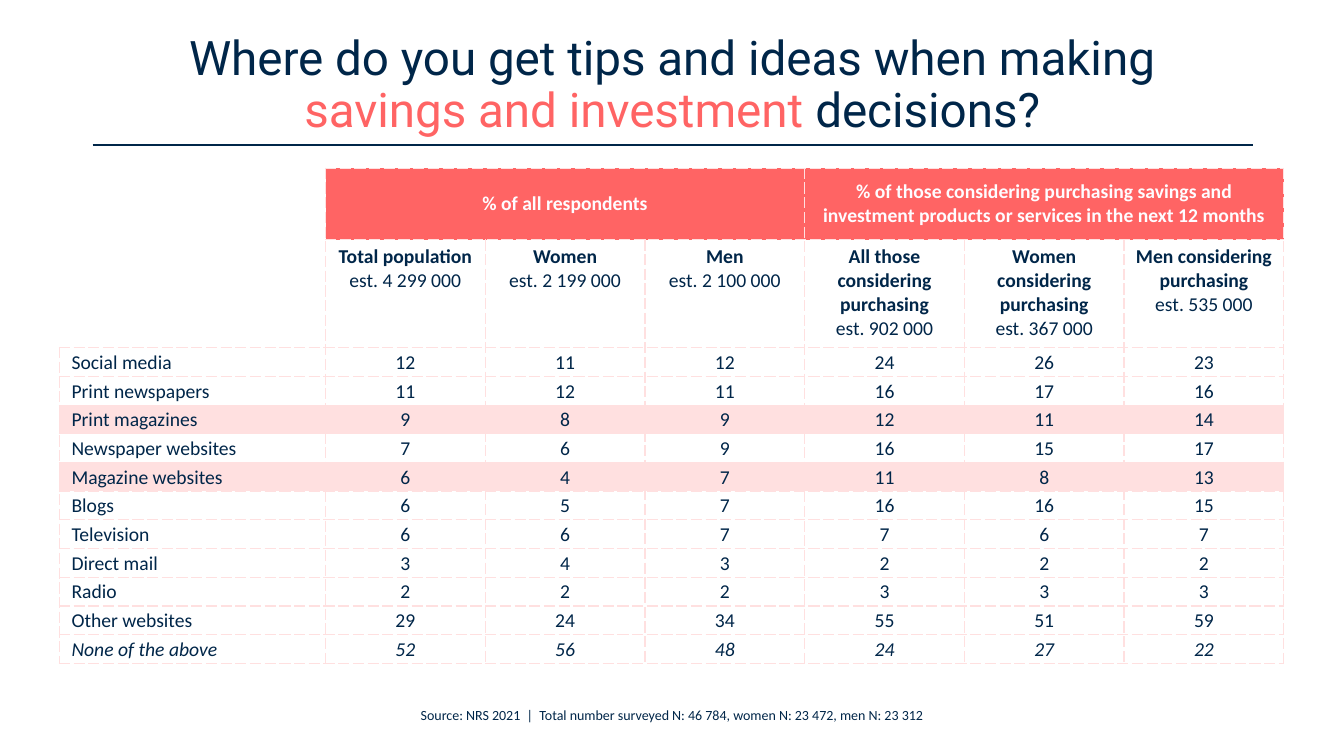
from dataclasses import dataclass

from lxml import etree
from pptx import Presentation, util as u
from pptx.dml.color import RGBColor
from pptx.enum import shapes, text
from pptx.oxml import ns

PX = 4572  # EMU; 200 px to the inch
CENTER, LEFT = text.PP_ALIGN.CENTER, text.PP_ALIGN.LEFT
MIDDLE, TOP = text.MSO_ANCHOR.MIDDLE, text.MSO_ANCHOR.TOP
BREAK = "\n"


@dataclass(frozen=True)
class Theme:
    navy: str = "002649"
    coral: str = "FF6464"
    blush: str = "FFE0E0"
    white: str = "FFFFFF"
    header_text: str = "FEFCFF"
    heading_font: str = "Roboto"
    body_font: str = "Calibri"
    title_size: int = 34
    table_size: int = 14
    source_size: int = 10


def px(length):
    return u.Emu(length * PX)


def set_attributes(target, values):
    for name, value in values.items():
        setattr(target, name, value)


class SlideBuilder:
    def __init__(self, presentation, theme):
        self.theme = theme
        self.slide = presentation.slides.add_slide(presentation.slide_layouts[5])

    def add_runs(self, paragraph, runs, size, align=CENTER, font=None, color=None):
        """Add (text, format) runs; a format may override the colour or any font value."""
        paragraph.alignment = align
        for content, changes in runs:
            if content == BREAK:
                paragraph.add_line_break()
                continue
            values = {"name": font or self.theme.body_font, "size": u.Pt(size),
                      "bold": False, "italic": False, **changes}
            run_color = values.pop("color", color or self.theme.navy)
            run = paragraph.add_run()
            run.text = content
            set_attributes(run.font, values)
            run.font.color.rgb = RGBColor.from_string(run_color)

    def title(self, box, runs):
        shape = self.slide.shapes.title
        set_attributes(shape, dict(zip(("left", "top", "width", "height"), map(px, box))))
        set_attributes(shape.text_frame, {
            "word_wrap": True, "vertical_anchor": MIDDLE, "auto_size": text.MSO_AUTO_SIZE.NONE})
        paragraph = shape.text_frame.paragraphs[0]
        paragraph.line_spacing = 0.9
        self.add_runs(paragraph, runs, self.theme.title_size, font=self.theme.heading_font)

    def rule(self, left, right, y):
        connector = self.slide.shapes.add_connector(
            shapes.MSO_CONNECTOR.STRAIGHT, px(left), px(y), px(right), px(y))
        connector.line.width = u.Pt(1)
        connector.line.color.rgb = RGBColor.from_string(self.theme.navy)
        etree.SubElement(connector._element.spPr, ns.qn("a:effectLst"))

    def source(self, box, content):
        frame = self.slide.shapes.add_textbox(*map(px, box)).text_frame
        set_attributes(frame, {
            "word_wrap": False, "auto_size": text.MSO_AUTO_SIZE.SHAPE_TO_FIT_TEXT})
        self.add_runs(frame.paragraphs[0], [(content, {})], self.theme.source_size)

    def table(self, left, top, widths, heights):
        """Add an unfilled table with dashed borders on every cell."""
        table = self.slide.shapes.add_table(
            len(heights), len(widths), px(left), px(top),
            px(sum(widths)), px(sum(heights))).table
        set_attributes(table, {"first_row": False, "horz_banding": False})
        for column, width in zip(table.columns, widths):
            column.width = px(width)
        for row, height in zip(table.rows, heights):
            row.height = px(height)
        for r in range(len(heights)):
            for c in range(len(widths)):
                is_corner = c == 0 and r < 2
                self.borders(table.cell(r, c), "RB" if is_corner else "LRTB")
                table.cell(r, c).fill.background()
        return table

    def borders(self, cell, sides):
        properties = cell._tc.get_or_add_tcPr()
        for side in "LRTB":
            line = etree.SubElement(properties, ns.qn(f"a:ln{side}"), w=str(u.Pt(1)))
            if side not in sides:
                etree.SubElement(line, ns.qn("a:noFill"))
                continue
            fill = etree.SubElement(line, ns.qn("a:solidFill"))
            etree.SubElement(fill, ns.qn("a:srgbClr"), val=self.theme.blush)
            etree.SubElement(line, ns.qn("a:prstDash"), val="sysDash")

    def cell(self, cell, runs, fill=None, anchor=MIDDLE, insets=None, **style):
        if fill:
            cell.fill.solid()
            cell.fill.fore_color.rgb = RGBColor.from_string(fill)
        cell.vertical_anchor = anchor
        if insets:
            sides = ("margin_left", "margin_top", "margin_right", "margin_bottom")
            set_attributes(cell, dict(zip(sides, map(px, insets))))
        self.add_runs(cell.text_frame.paragraphs[0], runs, self.theme.table_size, **style)


GROUPS = ["% of all respondents",
          "% of those considering purchasing savings and investment products "
          "or services in the next 12 months"]
AUDIENCES = [
    ("Total population", "est. 4 299 000"),
    ("Women", "est. 2 199 000"),
    ("Men", "est. 2 100 000"),
    ("All those considering purchasing", "est. 902 000"),
    ("Women considering purchasing", "est. 367 000"),
    ("Men considering purchasing", "est. 535 000"),
]
SHARES = {
    "Social media": (12, 11, 12, 24, 26, 23),
    "Print newspapers": (11, 12, 11, 16, 17, 16),
    "Print magazines": (9, 8, 9, 12, 11, 14),
    "Newspaper websites": (7, 6, 9, 16, 15, 17),
    "Magazine websites": (6, 4, 7, 11, 8, 13),
    "Blogs": (6, 5, 7, 16, 16, 15),
    "Television": (6, 6, 7, 7, 6, 7),
    "Direct mail": (3, 4, 3, 2, 2, 2),
    "Radio": (2, 2, 2, 3, 3, 3),
    "Other websites": (29, 24, 34, 55, 51, 59),
    "None of the above": (52, 56, 48, 24, 27, 22),
}
HIGHLIGHTED = {"Print magazines", "Magazine websites"}
ITALIC = {"None of the above"}


def add_tips_table(builder):
    theme = builder.theme
    table = builder.table(118, 334, [528] + [317] * len(AUDIENCES),
                          [142, 214] + [57] * len(SHARES))

    corner = table.cell(0, 0)
    corner.merge(table.cell(1, 0))
    builder.cell(corner, [], fill=theme.white)
    for index, group in enumerate(GROUPS):
        first = 1 + 3 * index
        header = table.cell(0, first)
        header.merge(table.cell(0, first + 2))
        builder.cell(header, [(group, {"bold": True})], fill=theme.coral,
                     color=theme.header_text)

    for column, (audience, estimate) in enumerate(AUDIENCES, 1):
        builder.cell(table.cell(1, column),
                     [(audience, {"bold": True}), (BREAK, {}), (estimate, {})], anchor=TOP)

    for row, (medium, shares) in enumerate(SHARES.items(), 2):
        for column, value in enumerate((medium, *shares)):
            is_label = column == 0
            builder.cell(table.cell(row, column),
                         [(str(value), {"italic": medium in ITALIC})],
                         fill=theme.blush if medium in HIGHLIGHTED else None,
                         insets=(24 if is_label else 2, 2, 2, 0),
                         align=LEFT if is_label else CENTER)


def main():
    presentation = Presentation()
    set_attributes(presentation, {"slide_width": px(2667), "slide_height": px(1500)})
    theme = Theme()
    builder = SlideBuilder(presentation, theme)
    builder.title((184, 64, 2300, 214), [
        ("Where do you get tips and ideas when making ", {}),
        ("savings and investment ", {"color": theme.coral}),
        ("decisions?", {}),
    ])
    add_tips_table(builder)
    builder.rule(184, 2486, 288)
    builder.source((804, 1392, 1058, 54),
                   "Source: NRS 2021  |  Total number surveyed N: 46 784, "
                   "women N: 23 472, men N: 23 312")
    presentation.save("out.pptx")


if __name__ == "__main__":
    main()
